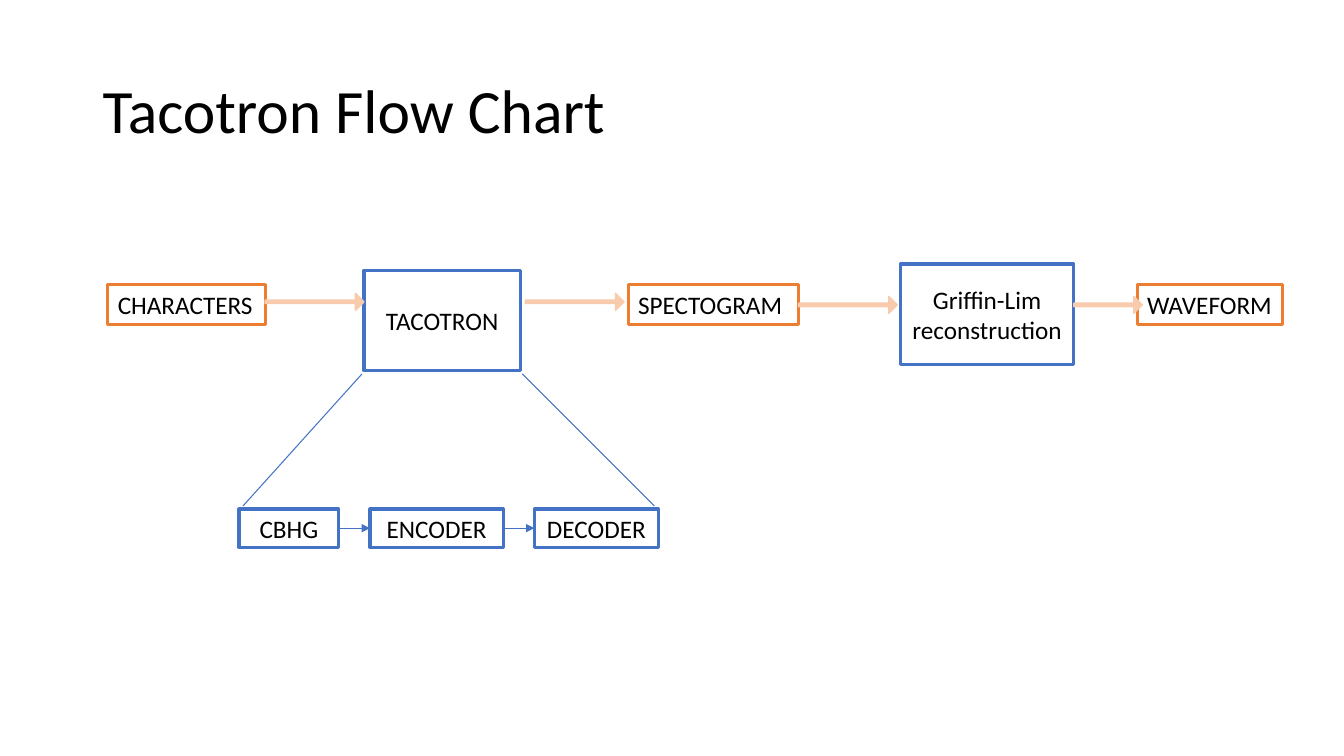
from lxml import etree
from pptx import Presentation
from pptx.dml.color import RGBColor
from pptx.enum.shapes import MSO_CONNECTOR, MSO_SHAPE
from pptx.enum.text import MSO_ANCHOR, PP_ALIGN
from pptx.oxml.ns import qn
from pptx.util import Inches, Pt

RECTANGLE = MSO_SHAPE.RECTANGLE
RIGHT_ARROW = MSO_SHAPE.RIGHT_ARROW
STRAIGHT = MSO_CONNECTOR.STRAIGHT
MIDDLE, TOP = MSO_ANCHOR.MIDDLE, MSO_ANCHOR.TOP
CENTER, LEFT = PP_ALIGN.CENTER, PP_ALIGN.LEFT
RIGHT_SIDE, LEFT_SIDE = 3, 1

BLACK = RGBColor(0x00, 0x00, 0x00)
WHITE = RGBColor(0xFF, 0xFF, 0xFF)
BLUE = RGBColor(0x44, 0x72, 0xC4)
ORANGE = RGBColor(0xED, 0x7D, 0x31)
PEACH = RGBColor(0xF8, 0xCB, 0xAD)
FONT = "Calibri"


def write_text(shape, text, size, alignment, anchor):
    frame = shape.text_frame
    frame.word_wrap = True
    frame.vertical_anchor = anchor
    paragraph = frame.paragraphs[0]
    paragraph.alignment = alignment
    run = paragraph.add_run()
    run.text = text
    run.font.name = FONT
    run.font.size = Pt(size)
    run.font.color.rgb = BLACK
    return paragraph


def add_filled_shape(slide, kind, box, fill, line, line_width):
    shape = slide.shapes.add_shape(kind, *(Inches(length) for length in box))
    shape.shadow.inherit = False
    shape.fill.solid()
    shape.fill.fore_color.rgb = fill
    shape.line.color.rgb = line
    shape.line.width = Pt(line_width)
    return shape


def add_process(slide, box, text):
    shape = add_filled_shape(slide, RECTANGLE, box, WHITE, BLUE, 2.25)
    write_text(shape, text, 18, CENTER, MIDDLE)
    return shape


def add_data(slide, box, text):
    shape = add_filled_shape(slide, RECTANGLE, box, WHITE, ORANGE, 2.25)
    write_text(shape, text, 18, LEFT, TOP)


def add_block_arrow(slide, box):
    arrow = add_filled_shape(slide, RIGHT_ARROW, box, PEACH, PEACH, 1)
    arrow.adjustments[0] = 0.2
    arrow.adjustments[1] = 0.5


def add_line(slide, start=(0, 0), end=(0, 0)):
    points = (Inches(length) for length in (*start, *end))
    connector = slide.shapes.add_connector(STRAIGHT, *points)
    connector.line.color.rgb = BLUE
    connector.line.width = Pt(0.75)
    etree.SubElement(connector._element.spPr, qn("a:effectLst"))
    return connector


def add_joined_arrow(slide, source, target):
    connector = add_line(slide)
    connector.begin_connect(source, RIGHT_SIDE)
    connector.end_connect(target, LEFT_SIDE)
    tail = etree.SubElement(connector.line._get_or_add_ln(), qn("a:tailEnd"))
    tail.set("type", "triangle")


def add_title(slide, box):
    title = slide.shapes.add_textbox(*(Inches(length) for length in box))
    paragraph = write_text(title, "Tacotron Flow Chart", 44, LEFT, MIDDLE)
    paragraph.line_spacing = 0.9


def add_pipeline(slide, box):
    left, top, _, height = box
    for text, offset, width in (
        ("CHARACTERS", 0, 1.56),
        ("SPECTOGRAM", 5.16, 1.69),
        ("WAVEFORM", 10.21, 1.44),
    ):
        add_data(slide, (left + offset, top + 0.2, width, 0.4), text)
    for text, offset, drop, width in (
        ("TACOTRON", 2.54, 0.06, 1.55),
        ("Griffin-Lim reconstruction", 7.86, 0, 1.72),
    ):
        add_process(slide, (left + offset, top + drop, width, height - 0.06), text)
    for offset, drop, width in (
        (1.56, 0.29, 0.98),
        (4.14, 0.29, 0.98),
        (6.85, 0.32, 0.98),
        (9.58, 0.32, 0.68),
    ):
        add_block_arrow(slide, (left + offset, top + drop, width, 0.17))


def add_tacotron_detail(slide, box):
    left, top, width, height = box
    stage_height = 0.38
    stage_top = top + height - stage_height
    fan_bottom = stage_top - 0.03
    add_line(slide, (left + 1.22, top), (left + 0.04, fan_bottom))
    add_line(slide, (left + 2.81, top), (left + width - 0.04, fan_bottom))
    stages = [
        add_process(slide, (left + offset, stage_top, stage_width, stage_height), text)
        for text, offset, stage_width in (
            ("CBHG", 0, 0.99),
            ("ENCODER", 1.3, 1.32),
            ("DECODER", 2.93, 1.23),
        )
    ]
    for source, target in zip(stages, stages[1:]):
        add_joined_arrow(slide, source, target)


def main():
    presentation = Presentation()
    presentation.slide_width = Inches(13.33)
    presentation.slide_height = Inches(7.5)
    slide = presentation.slides.add_slide(presentation.slide_layouts[6])
    add_title(slide, (0.92, 0.4, 11.5, 1.45))
    add_pipeline(slide, (1.07, 2.62, 11.65, 1.06))
    add_tacotron_detail(slide, (2.37, 3.71, 4.16, 1.72))
    presentation.save("out.pptx")


if __name__ == "__main__":
    main()
